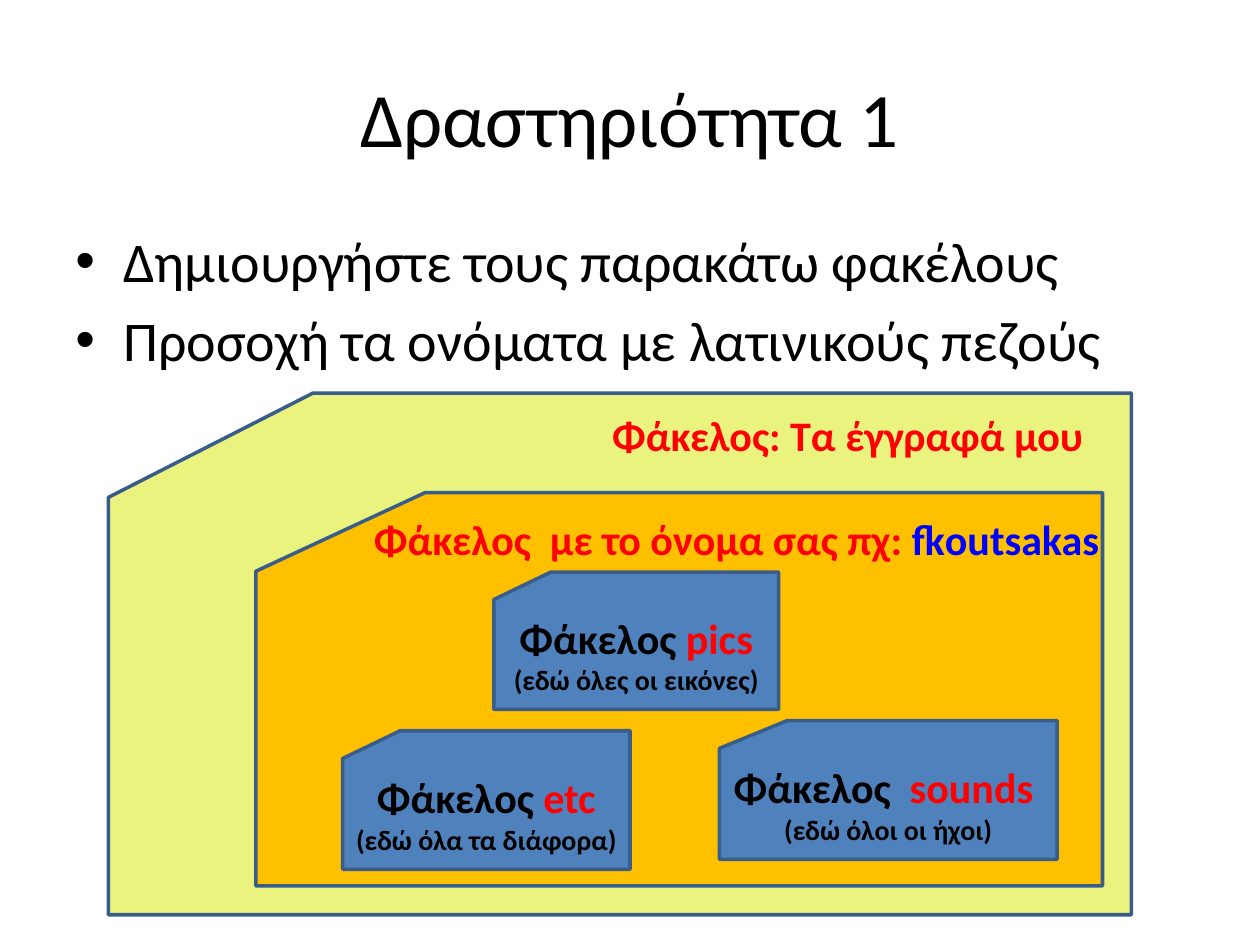
"""Build a slide of nested folders to be created by pupils."""
from dataclasses import dataclass

from lxml.etree import SubElement
from pptx import Presentation
from pptx.dml.color import RGBColor as Rgb
from pptx.enum.shapes import MSO_SHAPE as Kind
from pptx.enum.text import MSO_ANCHOR as Anchor, PP_ALIGN as Align
from pptx.oxml.ns import qn
from pptx.util import Inches, Pt

HUES = {
    "black": "000000", "red": "FF0000", "blue": "0000FF", "lime": "EBF37F",
    "gold": "FFC000", "steel": "4F81BD", "edge": "385D8A",
}
FONT = "Calibri"
CELL = 0.1
COLS, ROWS = 100, 75


@dataclass(frozen=True)
class Box:
    col: float
    row: float
    wide: float
    high: float

    def place(self) -> list[int]:
        return [Inches(n * CELL) for n in (self.col, self.row, self.wide, self.high)]


@dataclass(frozen=True)
class Card:
    box: Box
    hue: str
    name: str = ""
    note: str = ""


@dataclass(frozen=True)
class Label:
    box: Box
    runs: tuple[tuple[str, str], ...]


TITLE = Box(5, 3, 90, 12.5)
BODY = Box(5, 17.5, 90, 14)
TASKS = ("Δημιουργήστε τους παρακάτω φακέλους",
         "Προσοχή τα ονόματα με λατινικούς πεζούς")
PARTS = (
    Card(Box(8.6, 31.2, 81.2, 41.4), "lime"),
    Label(Box(47.6, 32, 40.2, 5), (("Φάκελος: Τα έγγραφά μου", "red"),)),
    Card(Box(20.3, 39.1, 67.2, 31.2), "gold"),
    Label(Box(28.7, 40.3, 59.6, 5),
          (("Φάκελος  με το όνομα σας πχ: ", "red"), ("fkoutsakas", "blue"))),
    Card(Box(39.2, 45.4, 22.6, 10.9), "steel", "Φάκελος |pics", "(εδώ όλες οι εικόνες)"),
    Card(Box(57.1, 57.2, 26.8, 11), "steel", "Φάκελος  |sounds ", "(εδώ όλοι οι ήχοι)"),
    Card(Box(27.2, 58, 22.8, 11), "steel", "Φάκελος |etc", "(εδώ όλα τα διάφορα)"),
)


def tint(hue: str) -> Rgb:
    return Rgb.from_string(HUES[hue])


def write(para, runs, size: float, bold: bool = False, align=Align.LEFT) -> None:
    para.alignment = align
    para.font.name, para.font.size, para.font.bold = FONT, Pt(size), bold
    for text, hue in runs:
        run = para.add_run()
        run.text = text
        run.font.color.rgb = tint(hue)


def head(slide) -> None:
    title = slide.shapes.title
    title.left, title.top, title.width, title.height = TITLE.place()
    title.text_frame.vertical_anchor = Anchor.MIDDLE
    write(title.text_frame.paragraphs[0], [("Δραστηριότητα 1", "black")], 44, align=Align.CENTER)


def tasks(slide) -> None:
    frame = slide.shapes.add_textbox(*BODY.place()).text_frame
    frame.word_wrap = True
    for i, text in enumerate(TASKS):
        para = frame.add_paragraph() if i else frame.paragraphs[0]
        write(para, [(text, "black")], 32)
        para.space_before = Pt(6.4 * i)
        props = para._p.get_or_add_pPr()
        props.set("marL", str(Inches(0.38)))
        props.set("indent", str(-Inches(0.38)))
        mark = SubElement(props, qn("a:buFont"), typeface="Arial")
        mark.addnext(SubElement(props, qn("a:buChar"), char="•"))
        props.append(props.find(qn("a:defRPr")))


def draw_card(slide, card: Card) -> None:
    shape = slide.shapes.add_shape(Kind.FLOWCHART_CARD, *card.box.place())
    shape.shadow.inherit = False
    shape.fill.solid()
    shape.fill.fore_color.rgb = tint(card.hue)
    shape.line.color.rgb = tint("edge")
    shape.line.width = Pt(2)
    if card.name:
        frame = shape.text_frame
        frame.vertical_anchor = Anchor.MIDDLE
        runs = zip(card.name.split("|"), ("black", "red"))
        write(frame.paragraphs[0], runs, 24, True, Align.CENTER)
        write(frame.add_paragraph(), [(card.note, "black")], 16, True, Align.CENTER)


def draw_label(slide, label: Label) -> None:
    frame = slide.shapes.add_textbox(*label.box.place()).text_frame
    frame.word_wrap = False
    write(frame.paragraphs[0], label.runs, 24, True)


def main() -> None:
    deck = Presentation()
    deck.slide_width, deck.slide_height = Inches(COLS * CELL), Inches(ROWS * CELL)
    slide = deck.slides.add_slide(deck.slide_layouts[5])
    head(slide)
    tasks(slide)
    for part in PARTS:
        if isinstance(part, Card):
            draw_card(slide, part)
        else:
            draw_label(slide, part)
    deck.save("out.pptx")


if __name__ == "__main__":
    main()
